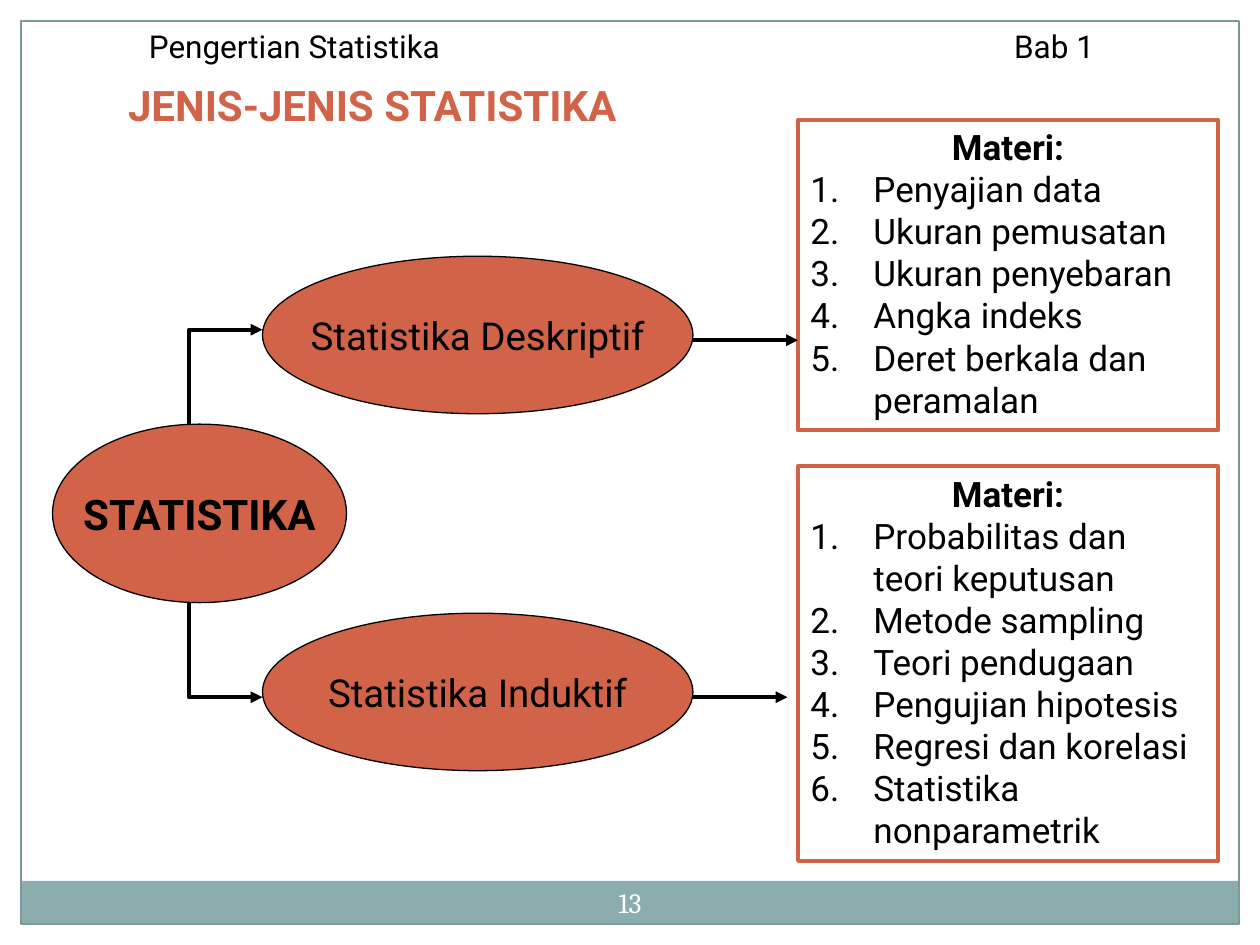
import pptx
import pptx.util
import pptx.dml.color
import pptx.enum.shapes
import pptx.enum.text
import pptx.oxml.ns

COLORS = {"accent": "D16349", "band": "8CADAE", "frame": "7C999A",
          "ink": "000000", "paper": "FFFFFF"}
COLUMNS, ROWS = 120, 90
SHAPES = pptx.enum.shapes.MSO_SHAPE
ALIGN = pptx.enum.text.PP_ALIGN
ANCHOR = pptx.enum.text.MSO_ANCHOR


def add_xml(parent, tag, **attributes):
    child = parent.makeelement(pptx.oxml.ns.qn(tag), attributes)
    parent.append(child)
    return child


class SlideBuilder:
    """Places styled elements on one slide; lengths are grid columns and rows."""

    font = "Roboto"

    def __init__(self, deck):
        self.page = deck.slides.add_slide(deck.slide_layouts[5])
        self.column = deck.slide_width / COLUMNS
        self.row = deck.slide_height / ROWS

    def point(self, x, y):
        return round(x * self.column), round(y * self.row)

    def area(self, left, top, width, height):
        return *self.point(left, top), *self.point(width, height)

    def color(self, name):
        return pptx.dml.color.RGBColor.from_string(COLORS[name])

    def outline(self, shape, color, width):
        shape.line.color.rgb = self.color(color)
        shape.line.width = pptx.util.Pt(width)

    def fill_paragraph(self, paragraph, text, size, color="ink", bold=False,
                       align=ALIGN.LEFT, font=None):
        paragraph.text = text
        paragraph.alignment = align
        paragraph.font.name = font or self.font
        paragraph.font.size = pptx.util.Pt(size)
        paragraph.font.bold = bold
        paragraph.font.color.rgb = self.color(color)

    def title(self, text, *area):
        box = self.page.shapes.title
        box.left, box.top, box.width, box.height = self.area(*area)
        box.text_frame.vertical_anchor = ANCHOR.TOP
        box.text_frame.auto_size = pptx.enum.text.MSO_AUTO_SIZE.NONE
        self.fill_paragraph(box.text_frame.paragraphs[0], text, 24, "accent", True)

    def text(self, text, size, *area, **style):
        box = self.page.shapes.add_textbox(*self.area(*area))
        box.text_frame.word_wrap = True
        box.text_frame.vertical_anchor = ANCHOR.MIDDLE
        paragraph = box.text_frame.paragraphs[0]
        self.fill_paragraph(paragraph, text, size, **style)
        return paragraph

    def header(self, left_text, right_text, tab, *area):
        """Put two texts on one line, the second at a tab stop."""
        paragraph = self.text(f"{left_text}\t{right_text}", 18, *area)
        properties = paragraph._p.get_or_add_pPr()
        stops = add_xml(properties, "a:tabLst")
        add_xml(stops, "a:tab", pos=str(round(tab * self.column)), algn="l")
        # Tab stops must precede the default run properties.
        properties.insert(0, stops)

    def shape(self, kind, *area, fill=None, line=None, width=0.75):
        shape = self.page.shapes.add_shape(kind, *self.area(*area))
        shape.shadow.inherit = False
        if fill:
            shape.fill.solid()
            shape.fill.fore_color.rgb = self.color(fill)
        else:
            shape.fill.background()
        if line:
            self.outline(shape, line, width)
        else:
            shape.line.fill.background()
        return shape

    def ellipse(self, text, size, *area, bold=False):
        frame = self.shape(SHAPES.OVAL, *area, fill="accent", line="ink").text_frame
        frame.word_wrap = False
        frame.vertical_anchor = ANCHOR.MIDDLE
        self.fill_paragraph(frame.paragraphs[0], text, size, bold=bold,
                            align=ALIGN.CENTER)

    def topics(self, heading, items, *area):
        """Draw an outlined box with a heading and a numbered list."""
        frame = self.shape(SHAPES.RECTANGLE, *area, line="accent", width=2.25).text_frame
        frame.word_wrap = True
        frame.vertical_anchor = ANCHOR.TOP
        indent = round(6 * self.column)
        for index, text in enumerate([heading, *items]):
            paragraph = frame.add_paragraph() if index else frame.paragraphs[0]
            self.fill_paragraph(paragraph, text, 20, bold=not index,
                                align=ALIGN.LEFT if index else ALIGN.CENTER)
            properties = paragraph._p.get_or_add_pPr()
            properties.set("marL", str(indent))
            properties.set("indent", str(-indent))
            if index:
                number = add_xml(properties, "a:buAutoNum", type="arabicPeriod")
                properties.insert(0, number)

    def arrow(self, *points):
        """Draw a straight arrow for two points, a bent one for more."""
        start, *others = [self.point(*point) for point in points]
        if len(others) == 1:
            kind = pptx.enum.shapes.MSO_CONNECTOR.STRAIGHT
            arrow = self.page.shapes.add_connector(kind, *start, *others[0])
        else:
            builder = self.page.shapes.build_freeform(*start)
            builder.add_line_segments(others, close=False)
            arrow = builder.convert_to_shape()
            arrow.fill.background()
        self.outline(arrow, "ink", 2.25)
        add_xml(arrow.line._get_or_add_ln(), "a:tailEnd", type="triangle")
        add_xml(arrow._element.spPr, "a:effectLst")


def main():
    deck = pptx.Presentation()
    deck.slide_width = pptx.util.Inches(10)
    deck.slide_height = pptx.util.Inches(7.5)
    slide = SlideBuilder(deck)

    slide.shape(SHAPES.RECTANGLE, 2, 83.9, 116, 4.1, fill="band")
    slide.shape(SHAPES.RECTANGLE, 2, 2, 116, 86, line="frame")
    slide.text("13", 16, 56, 83, 8, 5.8, color="paper", align=ALIGN.CENTER,
               font="Cambria")
    slide.header("Pengertian Statistika", "Bab 1", 82.4, 13, 2, 95, 4.8)
    slide.title("JENIS-JENIS STATISTIKA", 11, 7, 95, 6)

    slide.ellipse("STATISTIKA", 24, 5, 40.4, 28, 17, bold=True)
    for text, top in (("Statistika Deskriptif", 24.4), ("Statistika Induktif", 58.4)):
        slide.ellipse(text, 22, 25, top, 41, 15)

    slide.topics("Materi:", ["Penyajian data", "Ukuran pemusatan",
                             "Ukuran penyebaran", "Angka indeks",
                             "Deret berkala dan peramalan"],
                 76, 11.4, 40, 29.6)
    slide.topics("Materi:", ["Probabilitas dan teori keputusan", "Metode sampling",
                             "Teori pendugaan", "Pengujian hipotesis",
                             "Regresi dan korelasi", "Statistika nonparametrik"],
                 76, 44.4, 40, 37.6)

    for start, end in ((40.4, 31.4), (57.4, 66.4)):
        slide.arrow((18, start), (18, end), (25, end))
    slide.arrow((66, 32.4), (76, 32.4))
    slide.arrow((66, 66.4), (75, 66.4))

    deck.save("out.pptx")


if __name__ == "__main__":
    main()
